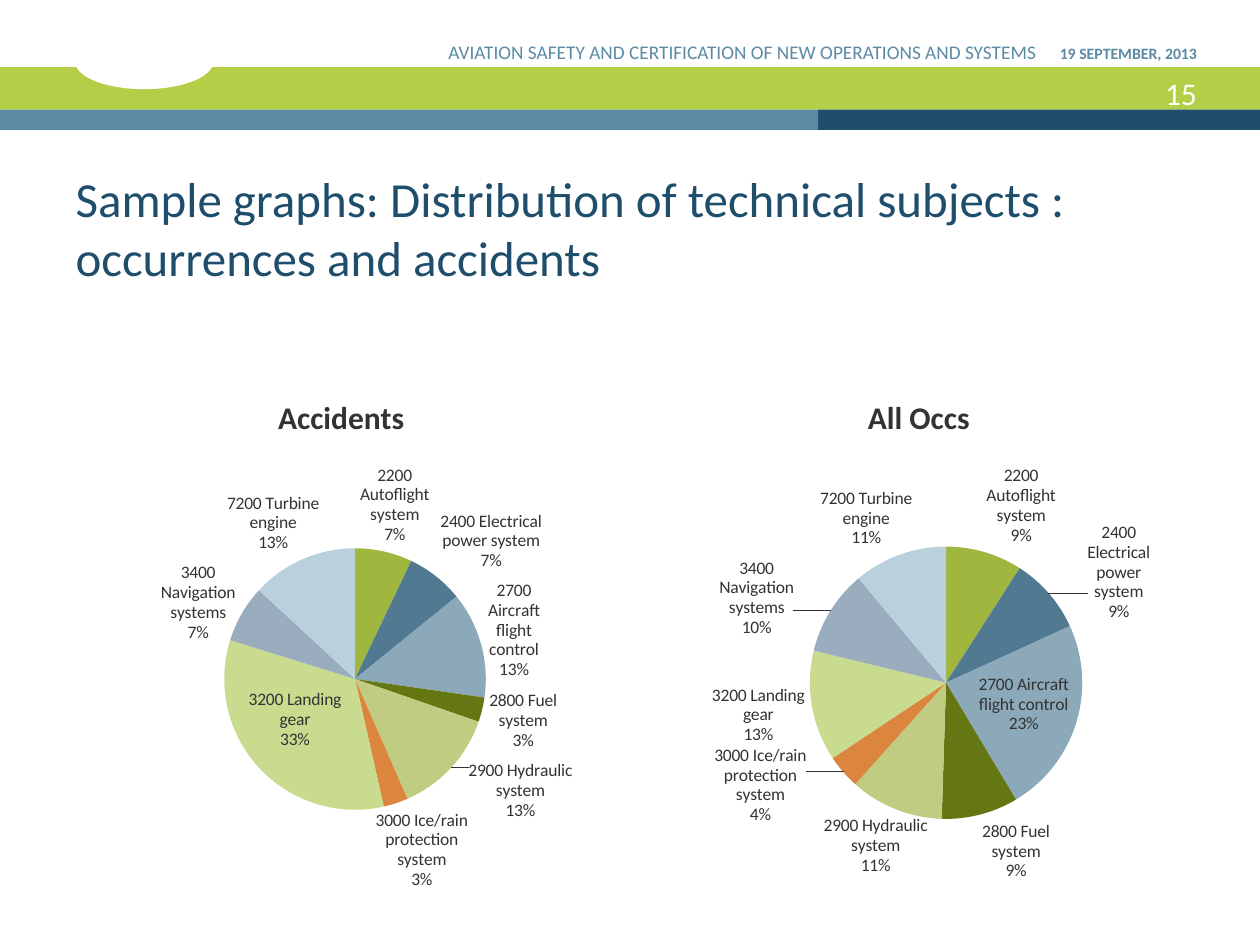
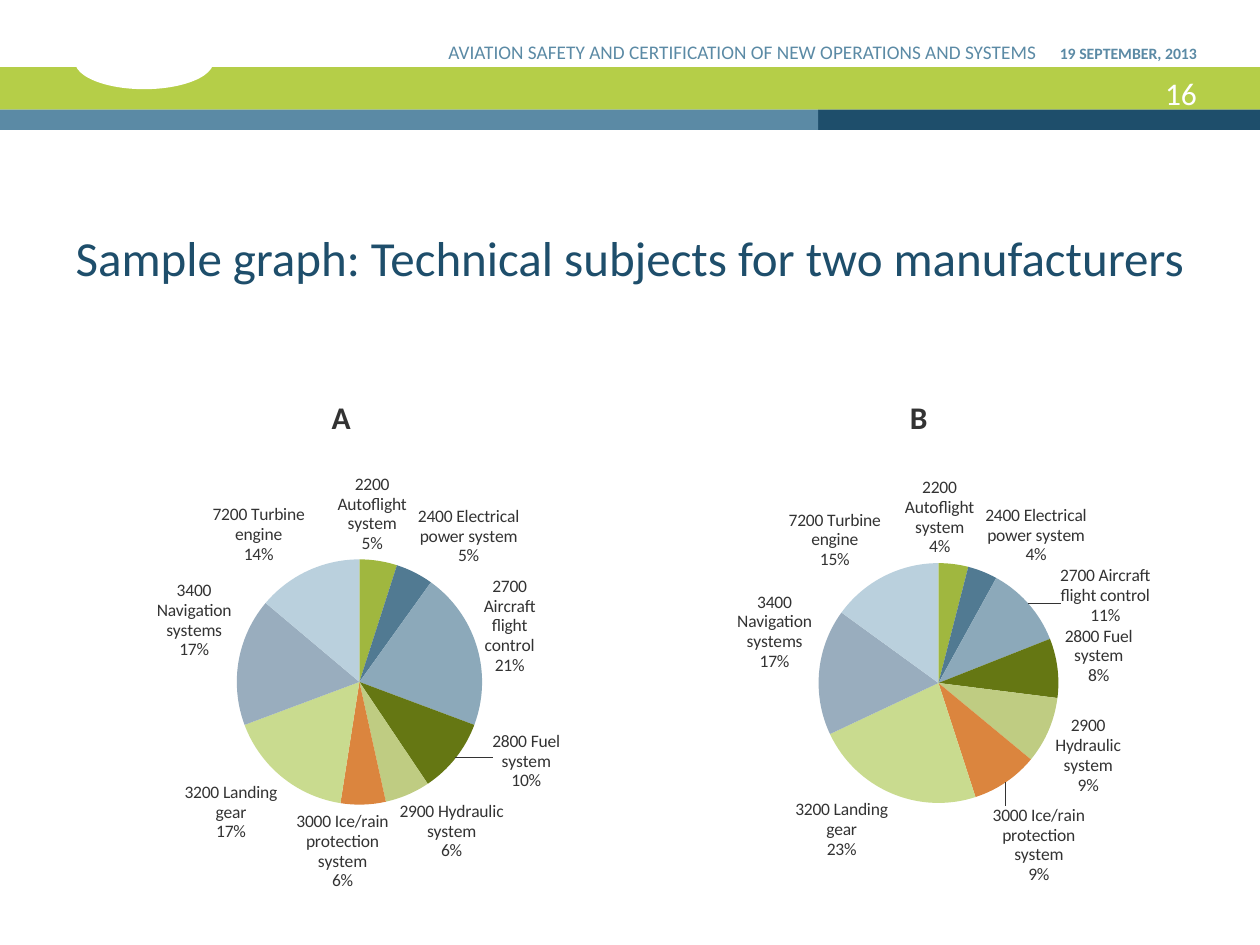
from lxml.etree import SubElement
from pptx import Presentation
from pptx.chart.data import CategoryChartData
from pptx.dml.color import RGBColor
from pptx.enum.chart import XL_CHART_TYPE, XL_LABEL_POSITION
from pptx.enum.shapes import MSO_SHAPE
from pptx.enum.text import MSO_ANCHOR, MSO_AUTO_SIZE, PP_ALIGN
from pptx.oxml.ns import qn
from pptx.util import Pt

FONT = "Calibri"
COLORS = {"white": "FFFFFF", "lime": "B5CE48", "steel": "5B8AA5", "navy": "1E4E6B", "text": "333333"}
SLICES = ["A0B73F", "517A92", "8CA9BA", "657713", "BFCC82", "DB853E", "C9DB8F", "99ADBE", "BAD0DD"]
SUBJECTS = [
    "2200 Autoflight system", "2400 Electrical power system", "2700 Aircraft flight control",
    "2800 Fuel system", "2900 Hydraulic system", "3000 Ice/rain protection system",
    "3200 Landing gear", "3400 Navigation systems", "7200 Turbine engine",
]
HEADER = "AVIATION SAFETY AND CERTIFICATION OF NEW OPERATIONS AND SYSTEMS"
DATE = "19 SEPTEMBER, 2013"
HEADER_BOX = (0, 0, 720, 74.2)
TITLE_BOX = (36, 82.8, 648, 84.2)
CHART_ROW = (36, 213, 648, 306)
CHART_GAP = 12

# title, page number, charts as (heading, series name, percentages)
SLIDES = [
    ("Sample graphs: Distribution of technical subjects : occurrences and accidents", 15, [
        ("Accidents", "Accidents", [7, 7, 13, 3, 13, 3, 33, 7, 13]),
        ("All Occs", "All Occs", [9, 9, 23, 9, 11, 4, 13, 10, 11]),
    ]),
    ("Sample graph: Technical subjects for two manufacturers", 16, [
        ("A", "Series 1", [5, 5, 21, 10, 6, 6, 17, 17, 14]),
        ("B", "Series 1", [4, 4, 11, 8, 9, 9, 23, 17, 15]),
    ]),
]


def rgb(name):
    return RGBColor.from_string(COLORS[name])


def set_font(font, size, color, bold=False):
    for key, value in {"name": FONT, "size": Pt(size), "bold": bold}.items():
        setattr(font, key, value)
    font.color.rgb = rgb(color)


def set_frame(tf, **extra):
    values = {"word_wrap": True, "auto_size": MSO_AUTO_SIZE.NONE, "vertical_anchor": MSO_ANCHOR.BOTTOM}
    for key, value in {**values, **extra}.items():
        setattr(tf, key, value)


def add_band(slide, shape_type, box, color):
    sp = slide.shapes.add_shape(shape_type, *map(Pt, box))
    sp.shadow.inherit = False
    sp.fill.solid()
    sp.fill.fore_color.rgb = rgb(color)
    sp.line.fill.background()


def add_label(slide, box, text, size, color, bold=False):
    tf = slide.shapes.add_textbox(*map(Pt, box)).text_frame
    set_frame(tf, margin_right=0)
    p = tf.paragraphs[0]
    p.alignment = PP_ALIGN.RIGHT
    r = p.add_run()
    r.text = text
    set_font(r.font, size, color, bold)


def add_header(slide, box, number):
    x, y, w, h = box
    band_y, stripe_y, split = y + 38.4, y + 62.7, 467.5
    right = x + w - 36
    add_band(slide, MSO_SHAPE.RECTANGLE, (x, band_y, w, stripe_y - band_y), "lime")
    add_band(slide, MSO_SHAPE.RECTANGLE, (x + split, stripe_y, w - split, y + h - stripe_y), "navy")
    add_band(slide, MSO_SHAPE.RECTANGLE, (x, stripe_y, split, y + h - stripe_y), "steel")
    add_band(slide, MSO_SHAPE.OVAL, (x + 42.8, y + 19.3, 79.2, 31.7), "white")
    add_label(slide, (right - 60, y + 38.9, 60, 28.8), str(number), 18, "white")
    add_label(slide, (right - 86, y + 3.6, 86, 36), DATE, 9, "steel", True)
    add_label(slide, (x + 212, y + 3.6, 380.5, 36), HEADER, 11, "steel")


def fill_title(slide, box, text):
    sp = slide.shapes.title
    sp.left, sp.top, sp.width, sp.height = map(Pt, box)
    sp.text = text
    set_frame(sp.text_frame)
    p = sp.text_frame.paragraphs[0]
    p.alignment = PP_ALIGN.LEFT
    set_font(p.runs[0].font, 28, "navy")


def add_pie(slide, box, heading, series_name, values):
    data = CategoryChartData()
    data.categories = SUBJECTS
    data.add_series(series_name, values)
    chart = slide.shapes.add_chart(XL_CHART_TYPE.PIE, *map(Pt, box), data).chart
    set_font(chart.font, 10, "text")
    chart.has_legend = False
    chart.has_title = True
    p = chart.chart_title.text_frame.paragraphs[0]
    r = p.add_run()
    r.text = heading
    set_font(r.font, 18, "text", True)

    plot = chart.plots[0]
    plot.vary_by_categories = True
    for i, color in enumerate(SLICES):
        fmt = plot.series[0].points[i].format
        fmt.fill.solid()
        fmt.fill.fore_color.rgb = RGBColor.from_string(color)
        fmt.line.fill.background()

    labels = plot.series[0].data_labels
    flags = {"show_category_name": True, "show_percentage": True, "show_value": False,
             "position": XL_LABEL_POSITION.BEST_FIT}
    for key, value in flags.items():
        setattr(labels, key, value)
    set_font(labels.font, 10, "text")
    dLbls = plot.series[0].data_labels._element
    for leader in dLbls.findall(qn("c:showLeaderLines")):
        dLbls.remove(leader)
    SubElement(dLbls, qn("c:separator")).text = "\n"
    SubElement(dLbls, qn("c:showLeaderLines")).set("val", "1")


def add_pie_row(slide, box, charts):
    x, y, w, h = box
    chart_w = (w - CHART_GAP * (len(charts) - 1)) / len(charts)
    for i, chart in enumerate(charts):
        add_pie(slide, (x + i * (chart_w + CHART_GAP), y, chart_w, h), *chart)


def main():
    prs = Presentation()
    prs.slide_width, prs.slide_height = Pt(720), Pt(540)
    for title, number, charts in SLIDES:
        slide = prs.slides.add_slide(prs.slide_layouts[5])
        add_header(slide, HEADER_BOX, number)
        fill_title(slide, TITLE_BOX, title)
        add_pie_row(slide, CHART_ROW, charts)
    prs.save("out.pptx")


if __name__ == "__main__":
    main()
